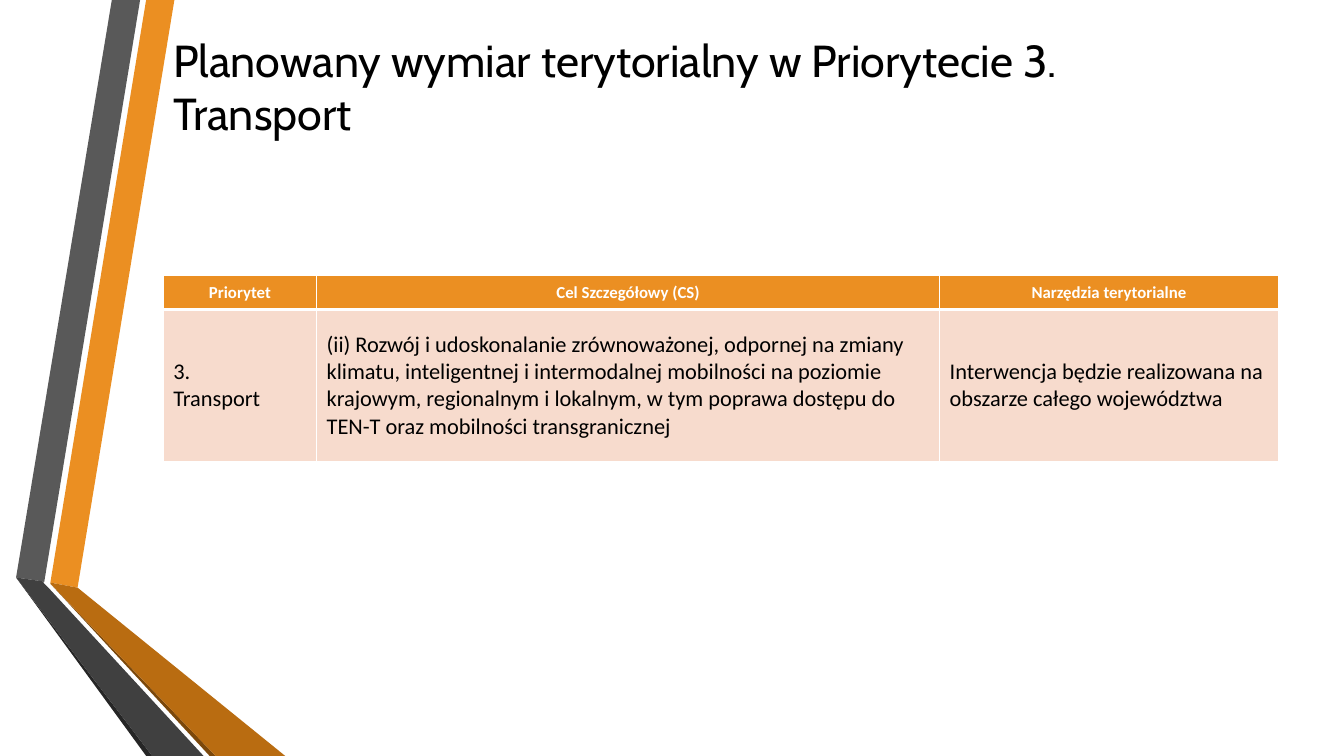
import pptx
import pptx.util
import pptx.dml.color
import pptx.enum.text
import pptx.oxml
import pptx.oxml.ns

Inches, Pt = pptx.util.Inches, pptx.util.Pt
PP_ALIGN = pptx.enum.text.PP_ALIGN
MIDDLE = pptx.enum.text.MSO_ANCHOR.MIDDLE
WIDTH, HEIGHT = 13.33, 7.5
LEFT = 1.62
ORANGE, WHITE, BLACK, PEACH = "EB8F22", "FFFFFF", "000000", "F7DBCD"


def rgb(value):
    return pptx.dml.color.RGBColor.from_string(value)


def add_border(cell, side, points):
    cell._tc.get_or_add_tcPr().append(pptx.oxml.parse_xml(
        f'<a:ln{side} {pptx.oxml.ns.nsdecls("a")} w="{Pt(points)}">'
        f'<a:solidFill><a:srgbClr val="{WHITE}"/></a:solidFill></a:ln{side}>'))


prs = pptx.Presentation()
prs.slide_width, prs.slide_height = Inches(WIDTH), Inches(HEIGHT)
s = prs.slides.add_slide(prs.slide_layouts[5])

ribbons = [
    (ORANGE, [(0.5, 5.78), (0.77, 5.83), (1.73, 0), (1.45, 0)]),
    ("595959", [(1.39, 0), (1.11, 0), (0.16, 5.73), (0.44, 5.77)]),
    ("262626", [(0.16, 5.73), (1.45, HEIGHT), (1.51, HEIGHT)]),
    ("7B480B", [(0.5, 5.79), (2.08, HEIGHT), (2.14, HEIGHT)]),
    ("B96C11", [(0.5, 5.79), (2.14, HEIGHT), (2.83, HEIGHT), (0.77, 5.83), (0.5, 5.78)]),
    ("404040", [(2.02, HEIGHT), (0.48, 5.83), (0.43, 5.78), (0.44, 5.77),
                (0.16, 5.73), (1.51, HEIGHT)]),
]
for color, corners in ribbons:
    points = [(Inches(x), Inches(y)) for x, y in corners]
    builder = s.shapes.build_freeform(*points[0])
    builder.add_line_segments(points[1:], close=True)
    sp = builder.convert_to_shape()
    sp.shadow.inherit = False
    sp.fill.solid()
    sp.fill.fore_color.rgb = rgb(color)
    sp.line.fill.background()

title = s.shapes.title
title.left, title.top = Inches(LEFT), Inches(0.21)
title.width, title.height = Inches(11.47), Inches(1.29)
tf = title.text_frame
tf.text = "Planowany wymiar terytorialny w Priorytecie 3.\vTransport"
tf.word_wrap = True
tf.auto_size = pptx.enum.text.MSO_AUTO_SIZE.NONE
tf.vertical_anchor = MIDDLE
p = tf.paragraphs[0]
p.alignment = PP_ALIGN.LEFT
p.font.name, p.font.size = "Cabin", Pt(32)
p.font.color.rgb = rgb(BLACK)

rows = [
    ["Priorytet", "Cel Szczegółowy (CS)", "Narzędzia terytorialne"],
    ["3.\nTransport",
     "(ii) Rozwój i udoskonalanie zrównoważonej, odpornej na zmiany klimatu, "
     "inteligentnej i intermodalnej mobilności na poziomie krajowym, regionalnym "
     "i lokalnym, w tym poprawa dostępu do TEN-T oraz mobilności transgranicznej",
     "Interwencja będzie realizowana na obszarze całego województwa"],
]
col_widths, row_heights = [1.52, 6.18, 3.36], [0.34, 1.51]
row_styles = [
    (ORANGE, WHITE, 12, True, PP_ALIGN.CENTER, {"L": 1, "R": 1, "T": 1, "B": 3}),
    (PEACH, BLACK, 16, False, PP_ALIGN.LEFT, {"L": 1, "R": 1, "T": 3, "B": 1}),
]
table = s.shapes.add_table(len(rows), len(col_widths), Inches(LEFT), Inches(2.73),
                           Inches(sum(col_widths)), Inches(sum(row_heights))).table
for column, width in zip(table.columns, col_widths):
    column.width = Inches(width)
for row, height, texts, style in zip(table.rows, row_heights, rows, row_styles):
    row.height = Inches(height)
    fill, color, size, bold, align, borders = style
    for cell, text in zip(row.cells, texts):
        cell.text = text
        cell.vertical_anchor = MIDDLE
        for side, points in borders.items():
            add_border(cell, side, points)
        cell.fill.solid()
        cell.fill.fore_color.rgb = rgb(fill)
        for p in cell.text_frame.paragraphs:
            p.alignment = align
            p.font.name, p.font.size, p.font.bold = "Calibri", Pt(size), bold
            p.font.color.rgb = rgb(color)

prs.save("out.pptx")
